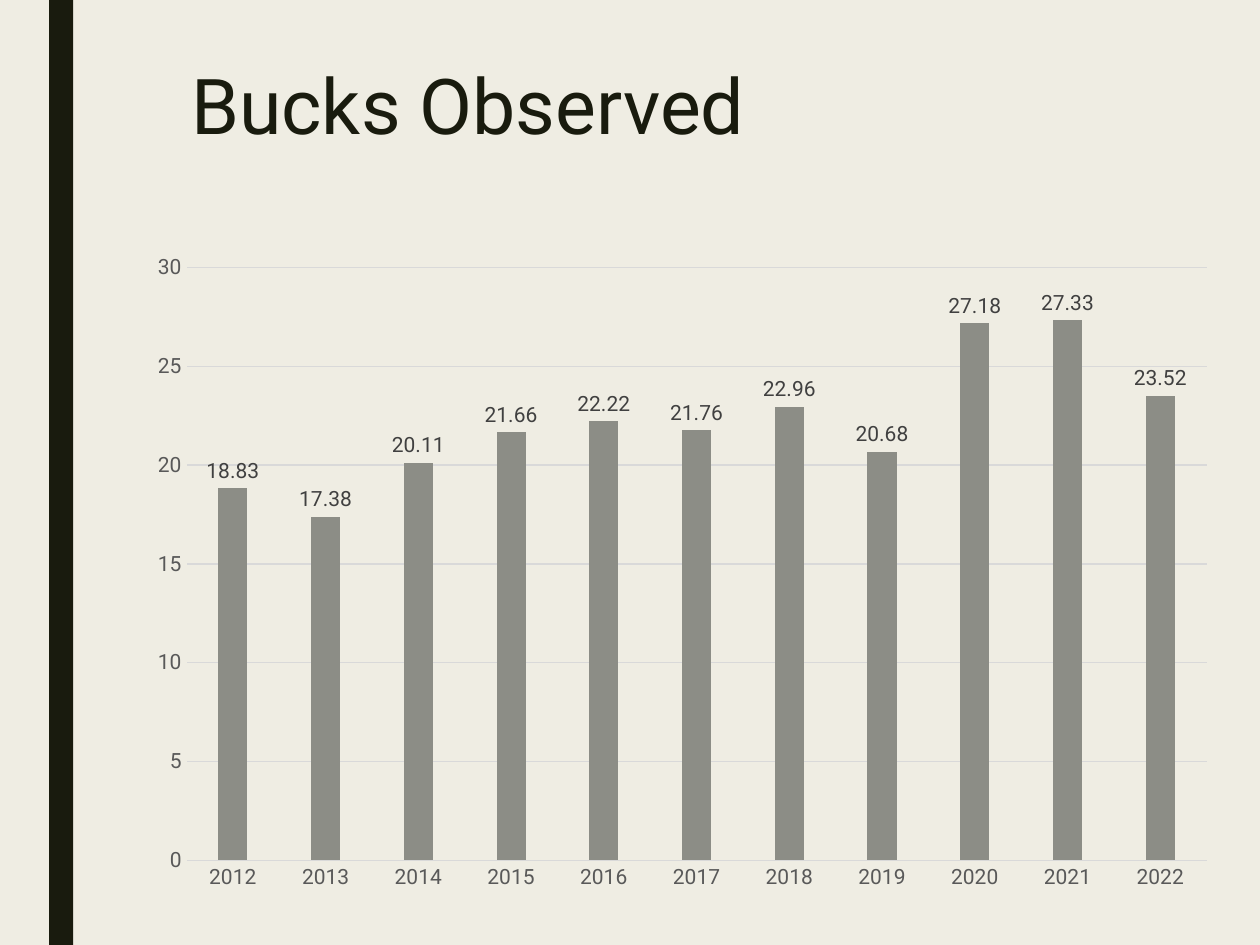
from dataclasses import dataclass

from pptx import Presentation
from pptx import util as u
from pptx.chart import data as chart_data
from pptx.dml.color import RGBColor
from pptx.enum import chart as charts, shapes, text


@dataclass(frozen=True)
class Theme:
    background: str = "EFEDE3"
    dark: str = "191B0E"
    column: str = "8C8D86"
    grid: str = "D9D9D9"
    axis_text: str = "595959"
    label_text: str = "404040"
    font: str = "Roboto"
    title_size: float = 44
    chart_size: float = 12
    grid_width: float = 0.75


class SlideBuilder:
    def __init__(self, slide, theme):
        self.slide = slide
        self.theme = theme
        self.fill(slide.background.fill, theme.background)

    def fill(self, fill, color):
        fill.solid()
        fill.fore_color.rgb = RGBColor.from_string(color)

    def style_font(self, font, size, color):
        font.name = self.theme.font
        font.size = u.Pt(size)
        font.bold = False
        font.color.rgb = RGBColor.from_string(color)

    def style_line(self, line):
        line.color.rgb = RGBColor.from_string(self.theme.grid)
        line.width = u.Pt(self.theme.grid_width)

    def bar(self, left, top, width, height):
        shape = self.slide.shapes.add_shape(
            shapes.MSO_SHAPE.RECTANGLE, *map(u.Inches, (left, top, width, height)))
        shape.shadow.inherit = False
        self.fill(shape.fill, self.theme.dark)
        shape.line.fill.background()

    def title(self, wording, left, top, width, height):
        box = self.slide.shapes.add_textbox(*map(u.Inches, (left, top, width, height)))
        frame = box.text_frame
        frame.word_wrap = True
        frame.vertical_anchor = text.MSO_ANCHOR.TOP
        frame.text = wording
        paragraph = frame.paragraphs[0]
        paragraph.line_spacing = 0.89
        self.style_font(paragraph.runs[0].font, self.theme.title_size, self.theme.dark)

    def column_chart(self, name, values, left, top, width, height):
        data = chart_data.CategoryChartData()
        data.categories = list(values)
        data.add_series(name, list(values.values()))
        chart = self.slide.shapes.add_chart(
            charts.XL_CHART_TYPE.COLUMN_CLUSTERED,
            *map(u.Inches, (left, top, width, height)), data).chart
        chart.has_legend = False
        chart.has_title = False
        self.style_font(chart.font, self.theme.chart_size, self.theme.axis_text)
        self.style_axes(chart)
        self.style_columns(chart.plots[0])

    def style_axes(self, chart):
        for axis in (chart.category_axis, chart.value_axis):
            axis.major_tick_mark = charts.XL_TICK_MARK.NONE
            axis.minor_tick_mark = charts.XL_TICK_MARK.NONE
            self.style_font(axis.tick_labels.font, self.theme.chart_size, self.theme.axis_text)
        self.style_line(chart.category_axis.format.line)
        value_axis = chart.value_axis
        value_axis.minimum_scale, value_axis.maximum_scale = 0, 30
        value_axis.major_unit = 5
        value_axis.format.line.fill.background()
        value_axis.has_major_gridlines = True
        self.style_line(value_axis.major_gridlines.format.line)

    def style_columns(self, plot):
        plot.gap_width = 219
        plot.overlap = -27
        plot.vary_by_categories = False
        self.fill(plot.series[0].format.fill, self.theme.column)
        plot.has_data_labels = True
        labels = plot.data_labels
        labels.show_value = True
        labels.position = charts.XL_LABEL_POSITION.OUTSIDE_END
        self.style_font(labels.font, self.theme.chart_size, self.theme.label_text)


def main():
    """Build the slide with the yearly chart of bucks observed."""
    presentation = Presentation()
    presentation.slide_width = u.Inches(10)
    presentation.slide_height = u.Inches(7.5)
    slide = presentation.slides.add_slide(presentation.slide_layouts[6])
    builder = SlideBuilder(slide, Theme())

    observed = [18.83, 17.38, 20.11, 21.66, 22.22, 21.76, 22.96, 20.68, 27.18, 27.33, 23.52]
    by_year = {str(year): value for year, value in enumerate(observed, start=2012)}

    builder.bar(0.39, 0, 0.19, 7.5)
    builder.title("Bucks Observed", 1.42, 0.5, 7.88, 1.62)
    builder.column_chart("Series 1", by_year, 1.08, 1.92, 8.67, 5.25)
    presentation.save("out.pptx")


if __name__ == "__main__":
    main()
